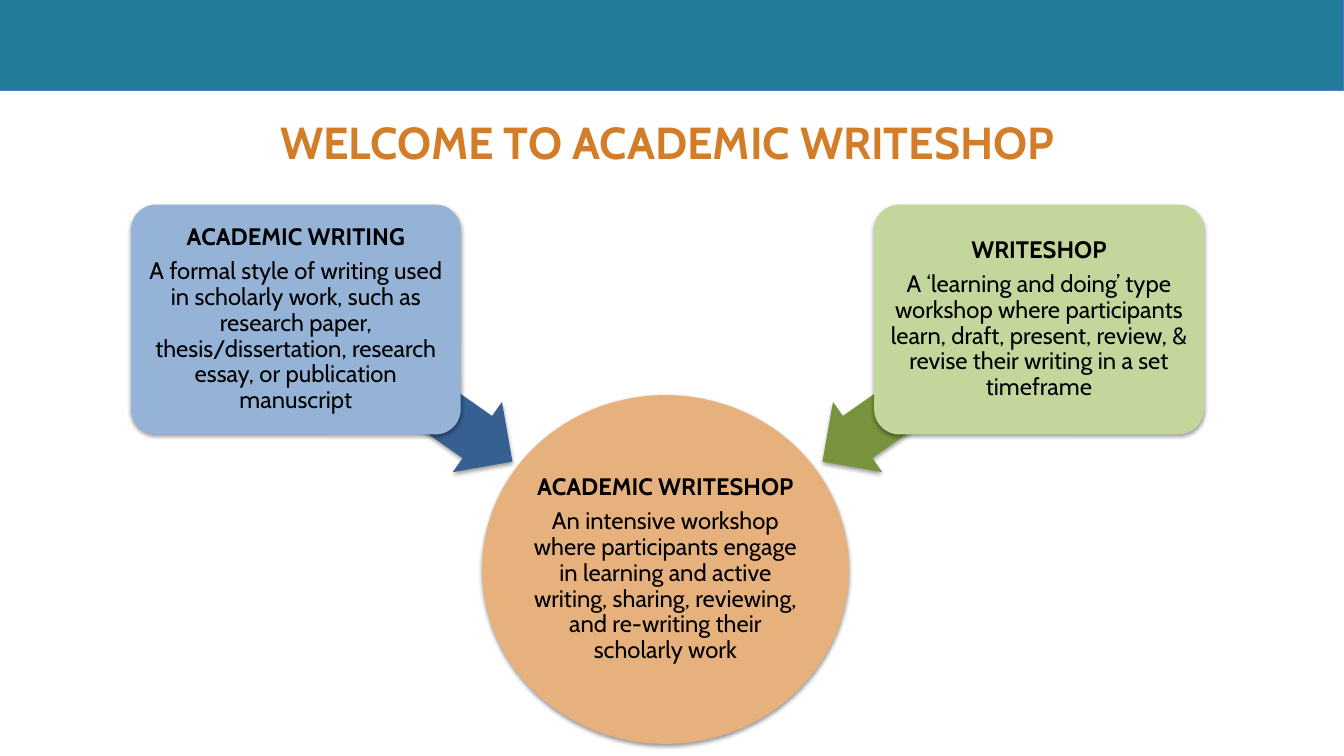
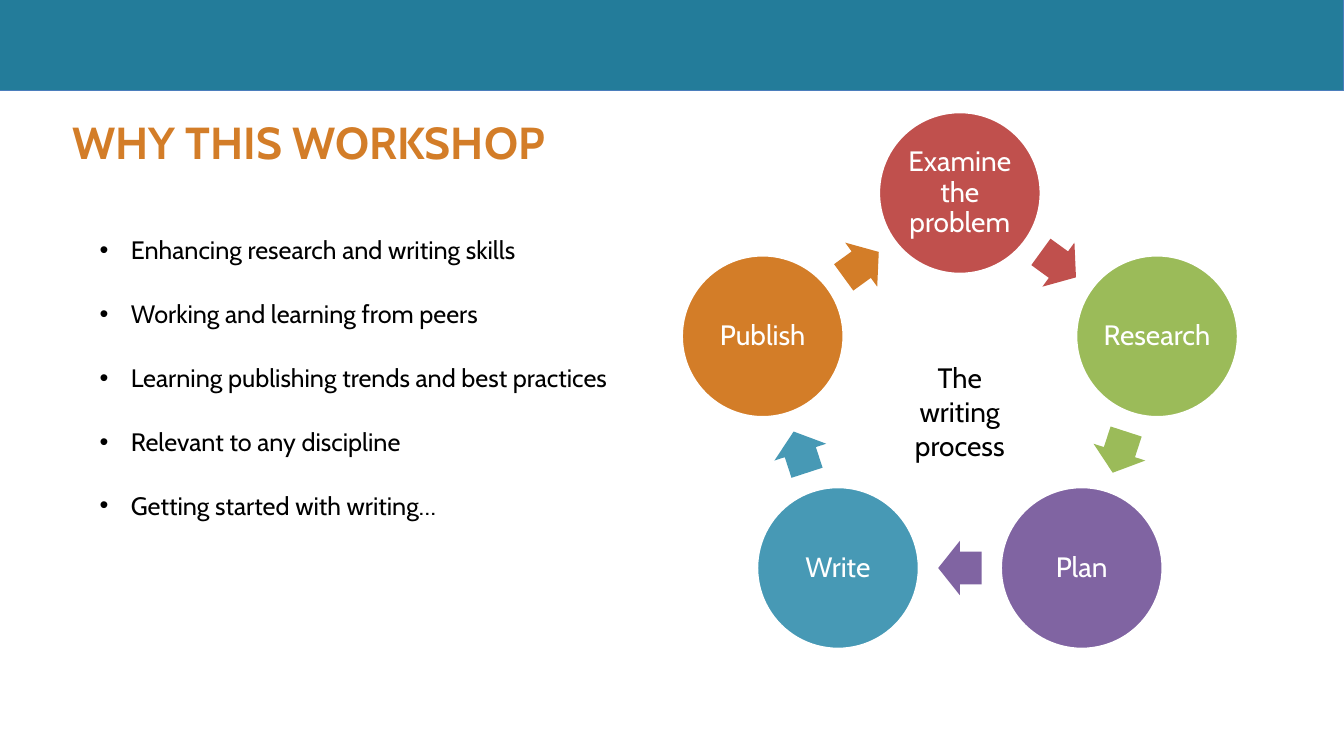
from dataclasses import dataclass
from math import cos, pi, sin

from lxml.etree import SubElement
from pptx import Presentation
from pptx.dml.color import RGBColor
from pptx.enum.shapes import MSO_SHAPE
from pptx.enum.text import MSO_ANCHOR, PP_ALIGN
from pptx.oxml.ns import qn
from pptx.util import Inches, Pt


@dataclass(frozen=True)
class Theme:
    """Colours, font and type sizes shared by the slides."""
    font: str = "Cabin"
    band: str = "237C9A"
    band_line: str = "4B7EBC"
    accent: str = "D37D28"
    text: str = "000000"
    light: str = "FFFFFF"
    hub: str = "E6B17C"
    blue: str = "95B3D7"
    dark_blue: str = "376092"
    lime: str = "C3D69B"
    dark_lime: str = "77933C"
    red: str = "C0504D"
    green: str = "9BBB59"
    purple: str = "8064A2"
    teal: str = "4799B5"
    title_size: int = 32
    cycle_size: int = 20
    bullet_size: int = 18
    card_size: int = 17


T = Theme()
WIDTH, HEIGHT = 13.33, 7.5
LABEL = {"alignment": PP_ALIGN.CENTER, "line_spacing": 0.9}

WRITING = ("ACADEMIC WRITING",
           "A formal style of writing used in scholarly work, such as research paper, "
           "thesis/dissertation, research essay, or publication manuscript")
WRITESHOP = ("WRITESHOP",
             "A ‘learning and doing’ type workshop where participants learn, draft, "
             "present, review, & revise their writing in a set timeframe")
HUB = ("ACADEMIC WRITESHOP",
       "An intensive workshop where participants engage in learning and active "
       "writing, sharing, reviewing, and re-writing their scholarly work")
REASONS = ("Enhancing research and writing skills",
           "Working and learning from peers",
           "Learning publishing trends and best practices",
           "Relevant to any discipline",
           "Getting started with writing…")
STEPS = (("Examine the problem", T.red), ("Research", T.green), ("Plan", T.purple),
         ("Write", T.teal), ("Publish", T.accent))


def rgb(value):
    """Turn a hex value into a colour."""
    return RGBColor.from_string(value)


def apply(obj, values):
    """Set every attribute named in a dict of format values."""
    for name, value in values.items():
        setattr(obj, name, value)


def set_frame(tf, inset=(0.1, 0.05, 0.1, 0.05), anchor=MSO_ANCHOR.TOP):
    """Set the wrap, anchor and insets of a text frame."""
    left, top, right, bottom = map(Inches, inset)
    apply(tf, {"word_wrap": True, "vertical_anchor": anchor, "margin_left": left,
               "margin_top": top, "margin_right": right, "margin_bottom": bottom})


def add_line(tf, text, size, color, bold=False, **para):
    """Add one formatted paragraph and return it."""
    p = tf.paragraphs[0] if not tf.text else tf.add_paragraph()
    apply(p, para)
    r = p.add_run()
    r.text = text
    apply(r.font, {"name": T.font, "size": Pt(size), "bold": bold})
    r.font.color.rgb = rgb(color)
    return p


def add_bullet(p, indent):
    """Give a paragraph a hanging round bullet."""
    pPr = p._p.get_or_add_pPr()
    pPr.set("marL", str(Inches(indent)))
    pPr.set("indent", str(-Inches(indent)))
    SubElement(pPr, qn("a:buFont"), typeface="Arial")
    SubElement(pPr, qn("a:buChar"), char="•")


def add_text(shapes, box, **frame):
    """Add a text box and return its text frame."""
    tf = shapes.add_textbox(*map(Inches, box)).text_frame
    set_frame(tf, **frame)
    return tf


def add_filled(shapes, kind, box, fill, line=None, adj=(), rotation=0):
    """Add a flat preset shape."""
    sp = shapes.add_shape(kind, *map(Inches, box))
    sp.shadow.inherit = False
    sp.rotation = rotation
    sp.fill.solid()
    sp.fill.fore_color.rgb = rgb(fill)
    for i, value in enumerate(adj):
        sp.adjustments[i] = value
    if line:
        color, width = line
        sp.line.color.rgb = rgb(color)
        sp.line.width = Pt(width)
    else:
        sp.line.fill.background()
    return sp


def add_shadow(sp):
    """Give a shape a soft shadow below it."""
    effects = sp._element.spPr.find(qn("a:effectLst"))
    shadow = SubElement(effects, qn("a:outerShdw"), blurRad=str(Pt(3.1)),
                        dist=str(Pt(1.6)), dir="5400000", rotWithShape="0")
    color = SubElement(shadow, qn("a:srgbClr"), val=T.text)
    SubElement(color, qn("a:alpha"), val="38000")


def add_definition(tf, term, meaning):
    """Write a bold term and its meaning."""
    for text, bold in ((term, True), (meaning, False)):
        add_line(tf, text, T.card_size, T.text, bold, space_after=Pt(6), **LABEL)


def add_base(prs, title, align):
    """Add a blank slide with the top band and the title."""
    s = prs.slides.add_slide(prs.slide_layouts[6])
    add_filled(s.shapes, MSO_SHAPE.RECTANGLE, (0, 0, WIDTH, 0.9), T.band, (T.band_line, 0.75))
    tf = add_text(s.shapes, (0.62, 1.09, 12, 0.65), inset=(0.1, 0.05, 0.1, 0))
    add_line(tf, title, T.title_size, T.accent, True, alignment=align)
    return s


def add_converging(s, box):
    """Draw two definition cards that point to a central circle."""
    x, y, w, h = box
    card_w, card_h = 3.27, 2.28
    arrow_w, arrow_h, arrow_dx = 2.63, 0.85, 1.39
    hub_w, hub_h = 3.64, 3.46
    hub_box = (x + 3.48, y + h - hub_h, hub_w, hub_h)
    add_shadow(add_filled(s.shapes, MSO_SHAPE.OVAL, hub_box, T.hub))
    tf = add_text(s.shapes, hub_box, inset=(0.45,) * 4, anchor=MSO_ANCHOR.MIDDLE)
    add_definition(tf, *HUB)
    sides = ((x, x + arrow_dx, 215, T.blue, T.dark_blue, WRITING),
             (x + w - card_w, x + w - arrow_dx - arrow_w, 325, T.lime, T.dark_lime, WRITESHOP))
    for card_x, arrow_x, angle, fill, arrow_fill, words in sides:
        add_shadow(add_filled(s.shapes, MSO_SHAPE.LEFT_ARROW,
                              (arrow_x, y + 1.37, arrow_w, arrow_h), arrow_fill,
                              adj=(0.6, 0.5), rotation=angle))
        card = add_filled(s.shapes, MSO_SHAPE.ROUNDED_RECTANGLE,
                          (card_x, y, card_w, card_h), fill, adj=(0.11,))
        add_shadow(card)
        set_frame(card.text_frame, (0.02,) * 4, MSO_ANCHOR.MIDDLE)
        add_definition(card.text_frame, *words)


def add_reasons(s, box):
    """Write the bulleted reasons."""
    tf = add_text(s.shapes, box)
    for i, text in enumerate(REASONS):
        p = add_line(tf, text, T.bullet_size, T.text,
                     space_before=Pt(12 if i else 0), space_after=Pt(12))
        add_bullet(p, 0.31)


def add_cycle(s, box):
    """Draw the steps on a ring with an arrow between neighbours."""
    x, y, w, h = box
    node, arrow_w, arrow_h = 1.61, 0.43, 0.54
    turn = 2 * pi / len(STEPS)
    radius = (h - node) / (1 + cos(turn / 2))
    cx, cy = x + w / 2, y + node / 2 + radius
    shapes = s.shapes.add_group_shape().shapes
    for i, (text, fill) in enumerate(STEPS):
        nx, ny = cx + radius * sin(i * turn), cy - radius * cos(i * turn)
        sp = add_filled(shapes, MSO_SHAPE.OVAL,
                        (nx - node / 2, ny - node / 2, node, node), fill, (T.light, 2))
        set_frame(sp.text_frame, (0.03,) * 4, MSO_ANCHOR.MIDDLE)
        add_line(sp.text_frame, text, T.cycle_size, T.light, **LABEL)
        mid, reach = (i + 0.5) * turn, radius * cos(turn / 2)
        ax, ay = cx + reach * sin(mid), cy - reach * cos(mid)
        add_filled(shapes, MSO_SHAPE.RIGHT_ARROW,
                   (ax - arrow_w / 2, ay - arrow_h / 2, arrow_w, arrow_h), fill,
                   adj=(0.6, 0.5), rotation=360 / len(STEPS) * (i + 0.5))
    tf = add_text(s.shapes, (cx - 0.7, y + 2.42, 1.4, 1.11))
    add_line(tf, "The writing process", T.cycle_size, T.text, alignment=PP_ALIGN.CENTER)


def main():
    """Build and save the slides."""
    prs = Presentation()
    prs.slide_width, prs.slide_height = Inches(WIDTH), Inches(HEIGHT)
    s = add_base(prs, "WELCOME TO ACADEMIC WRITESHOP", PP_ALIGN.CENTER)
    add_converging(s, (1.3, 2.03, 10.64, 5.35))
    s = add_base(prs, "WHY THIS WORKSHOP", PP_ALIGN.LEFT)
    add_reasons(s, (0.89, 2.28, 5.77, 3.6))
    add_cycle(s, (6.76, 1.11, 5.52, 5.33))
    prs.save("out.pptx")


if __name__ == "__main__":
    main()
